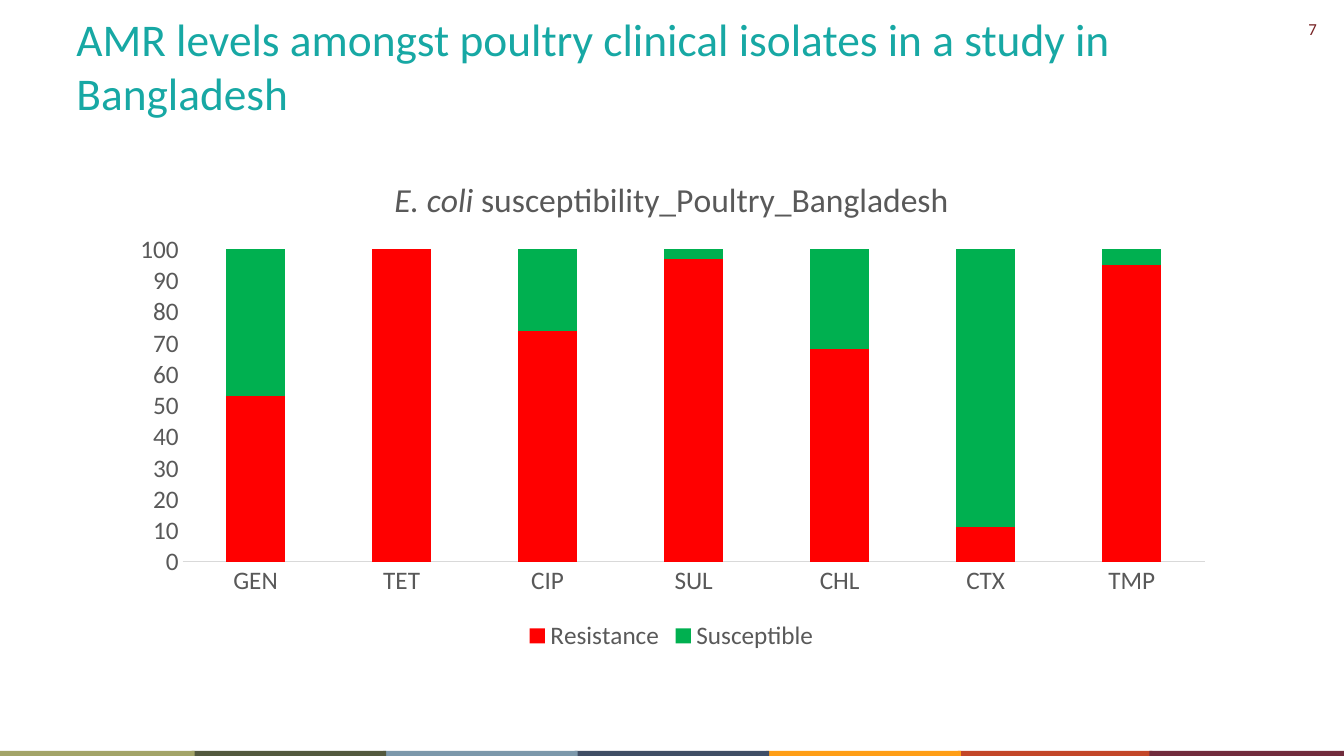
from dataclasses import dataclass
from typing import Optional

from lxml import etree
from pptx import Presentation
from pptx import util as u
from pptx.chart.data import CategoryChartData
from pptx.dml.color import RGBColor
from pptx.enum import chart as ch, shapes, text
from pptx.oxml.ns import qn


@dataclass(frozen=True)
class Theme:
    font: str = "Calibri"
    title: str = "17A8A4"
    number: str = "762123"
    chart_text: str = "595959"
    axis_line: str = "D9D9D9"
    title_size: float = 32.4
    number_size: float = 12
    chart_title_size: float = 24
    chart_size: float = 18


@dataclass(frozen=True)
class Label:
    words: str
    left: float
    top: float
    width: float
    height: float
    size: float
    color: str
    align: text.PP_ALIGN
    anchor: text.MSO_ANCHOR


@dataclass(frozen=True)
class Band:
    column: int
    color: str


@dataclass(frozen=True)
class Series:
    name: str
    values: tuple[int, ...]
    color: str


THEME = Theme()
LABELS = (
    Label("7", 12.46, 0.14, 0.7, 0.3, THEME.number_size, THEME.number,
          text.PP_ALIGN.RIGHT, text.MSO_ANCHOR.TOP),
    Label("AMR levels amongst poultry clinical isolates in a study in Bangladesh",
          0.66, 0.28, 12.24, 0.74, THEME.title_size, THEME.title,
          text.PP_ALIGN.LEFT, text.MSO_ANCHOR.MIDDLE),
)
# Back to front: each band slightly overlaps its neighbour
BANDS = (
    Band(5, "C34628"), Band(6, "712C3D"), Band(4, "FF9E16"), Band(3, "404E65"),
    Band(2, "7C98AB"), Band(1, "53593E"), Band(0, "A3A467"),
)
BAND_PITCH, BAND_WIDTH, BAND_HEIGHT, BAND_TOP = 1.9, 1.93, 0.06, 7.45
ANTIBIOTICS = ("GEN", "TET", "CIP", "SUL", "CHL", "CTX", "TMP")
SERIES = (
    Series("Resistance", (53, 100, 74, 97, 68, 11, 95), "FF0000"),
    Series("Susceptible", (47, 0, 26, 3, 32, 89, 5), "00B050"),
)
# Plot area as fractions of the chart frame
PLOT = {"x": 0.06, "y": 0.18, "w": 0.92, "h": 0.63}


def style(font, size: float, color: str, italic: Optional[bool] = None) -> None:
    font.name = THEME.font
    font.size = u.Pt(size)
    font.bold = False
    font.italic = italic
    font.color.rgb = RGBColor.from_string(color)


def add_label(s, label: Label) -> None:
    sp = s.shapes.add_textbox(u.Inches(label.left), u.Inches(label.top),
                              u.Inches(label.width), u.Inches(label.height))
    tf = sp.text_frame
    tf.word_wrap = True
    tf.vertical_anchor = label.anchor
    p = tf.paragraphs[0]
    p.alignment = label.align
    r = p.add_run()
    r.text = label.words
    style(r.font, label.size, label.color)


def add_band(s, band: Band) -> None:
    sp = s.shapes.add_shape(
        shapes.MSO_SHAPE.RECTANGLE, u.Inches(band.column * BAND_PITCH),
        u.Inches(BAND_TOP), u.Inches(BAND_WIDTH), u.Inches(BAND_HEIGHT))
    sp.shadow.inherit = False
    sp.fill.solid()
    sp.fill.fore_color.rgb = RGBColor.from_string(band.color)
    sp.line.fill.background()


def set_plot_layout(chart) -> None:
    plot_area = chart.plots[0]._element.getparent()
    for old in plot_area.findall(qn("c:layout")):
        plot_area.remove(old)
    layout = etree.Element(qn("c:layout"))
    manual = etree.SubElement(layout, qn("c:manualLayout"))
    settings = {"layoutTarget": "inner", "xMode": "edge", "yMode": "edge", **PLOT}
    for tag, value in settings.items():
        etree.SubElement(manual, qn(f"c:{tag}")).set("val", str(value))
    plot_area.insert(0, layout)


def add_susceptibility_chart(s) -> None:
    data = CategoryChartData()
    data.categories = ANTIBIOTICS
    for series in SERIES:
        data.add_series(series.name, series.values)
    chart = s.shapes.add_chart(
        ch.XL_CHART_TYPE.COLUMN_STACKED, u.Inches(1.15), u.Inches(1.59),
        u.Inches(11.02), u.Inches(4.92), data).chart
    style(chart.font, THEME.chart_size, THEME.chart_text)

    # Chart title
    chart.has_title = True
    p = chart.chart_title.text_frame.paragraphs[0]
    for words, italic in (("E. coli", True), (" susceptibility_Poultry_Bangladesh", False)):
        r = p.add_run()
        r.text = words
        style(r.font, THEME.chart_title_size, THEME.chart_text, italic)
    chart.chart_title.include_in_layout = False

    # Columns
    plot = chart.plots[0]
    plot.gap_width, plot.overlap = 150, 100
    plot.vary_by_categories = False
    for drawn, series in zip(plot.series, SERIES):
        drawn.format.fill.solid()
        drawn.format.fill.fore_color.rgb = RGBColor.from_string(series.color)

    # Axes
    for axis in (chart.category_axis, chart.value_axis):
        axis.major_tick_mark = axis.minor_tick_mark = ch.XL_TICK_MARK.NONE
        axis.has_major_gridlines = False
        style(axis.tick_labels.font, THEME.chart_size, THEME.chart_text)
    line = chart.category_axis.format.line
    line.width = u.Pt(0.75)
    line.color.rgb = RGBColor.from_string(THEME.axis_line)
    values = chart.value_axis
    values.minimum_scale, values.maximum_scale, values.major_unit = 0, 100, 10
    values.format.line.fill.background()

    # Legend
    chart.has_legend = True
    chart.legend.position = ch.XL_LEGEND_POSITION.BOTTOM
    chart.legend.include_in_layout = False
    style(chart.legend.font, THEME.chart_size, THEME.chart_text)
    set_plot_layout(chart)


def main() -> None:
    prs = Presentation()
    prs.slide_width, prs.slide_height = u.Inches(13.33), u.Inches(7.5)
    s = prs.slides.add_slide(prs.slide_layouts[6])
    number, title = LABELS
    add_label(s, number)
    for band in BANDS:
        add_band(s, band)
    add_susceptibility_chart(s)
    add_label(s, title)
    prs.save("out.pptx")


if __name__ == "__main__":
    main()
